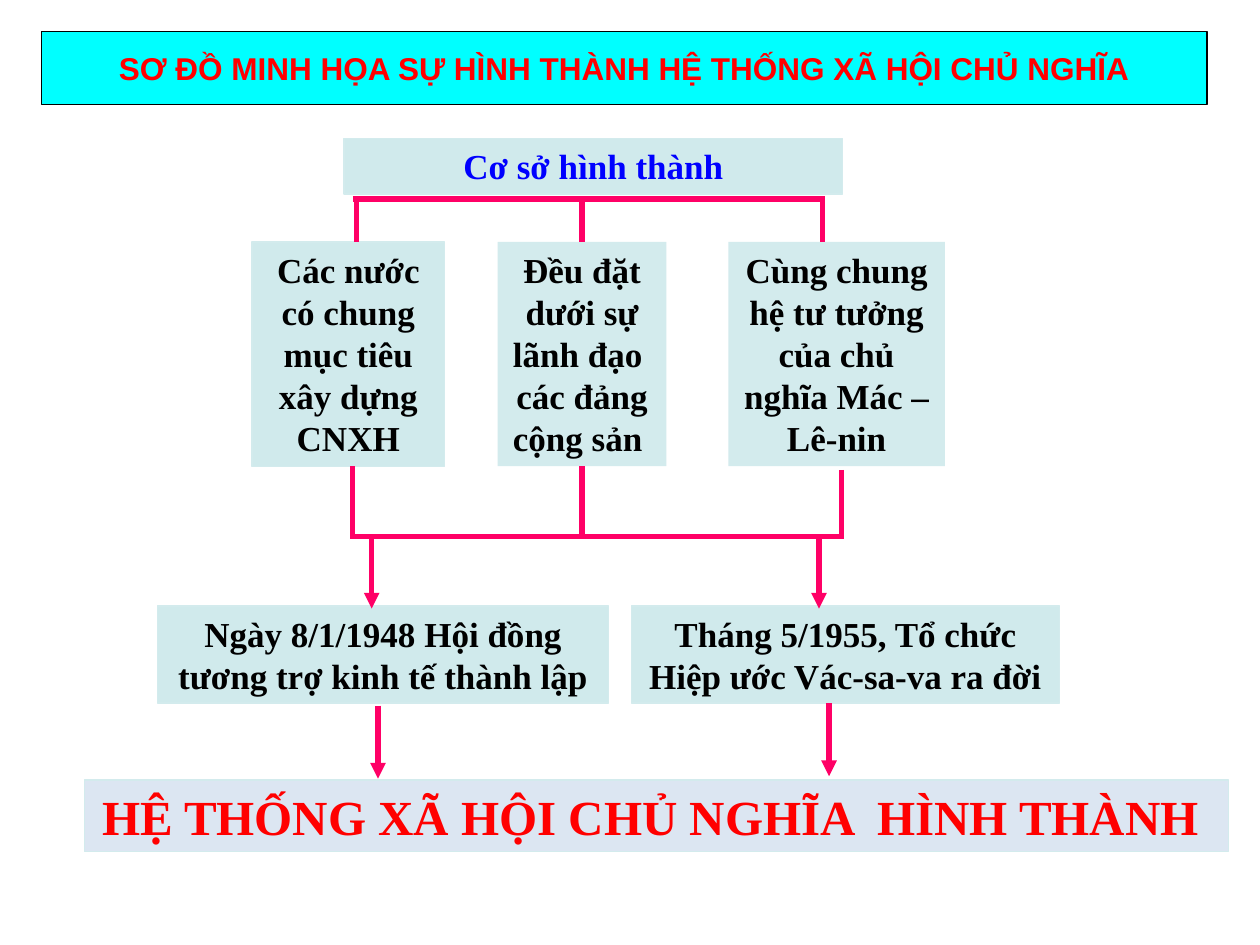
from dataclasses import dataclass

from lxml.etree import SubElement
from pptx import Presentation
from pptx.dml.color import RGBColor
from pptx.enum.shapes import MSO_CONNECTOR, MSO_SHAPE
from pptx.enum.text import MSO_ANCHOR, MSO_AUTO_SIZE, PP_ALIGN
from pptx.oxml.ns import qn
from pptx.util import Emu, Pt

SCALE = 9144  # EMU per px, 100 px to the inch


@dataclass(frozen=True)
class Theme:
    cyan: RGBColor = RGBColor(0x00, 0xFF, 0xFF)
    teal: RGBColor = RGBColor(0xD0, 0xEA, 0xEC)
    pale_teal: RGBColor = RGBColor(0xD3, 0xEB, 0xED)
    pale_blue: RGBColor = RGBColor(0xDC, 0xE6, 0xF2)
    pink: RGBColor = RGBColor(0xFF, 0x00, 0x66)
    red: RGBColor = RGBColor(0xFF, 0x00, 0x00)
    blue: RGBColor = RGBColor(0x00, 0x00, 0xFF)
    black: RGBColor = RGBColor(0x00, 0x00, 0x00)
    title_font: str = "Arial"
    body_font: str = "Times New Roman"
    title_size: Pt = Pt(18)
    body_size: Pt = Pt(20)
    result_size: Pt = Pt(28)
    border: Pt = Pt(0.75)
    stroke: Pt = Pt(3)


theme = Theme()
presentation = Presentation()
presentation.slide_width = Emu(1000 * SCALE)
presentation.slide_height = Emu(750 * SCALE)
slide = presentation.slides.add_slide(presentation.slide_layouts[5])


def style_text(shape, text, font, size, color):
    shape.text_frame.text = text
    for paragraph in shape.text_frame.paragraphs:
        paragraph.alignment = PP_ALIGN.CENTER
        paragraph.font.name = font
        paragraph.font.size = size
        paragraph.font.bold = True
        paragraph.font.color.rgb = color


def add_line(x1, y1, x2, y2, arrow=False):
    line = slide.shapes.add_connector(
        MSO_CONNECTOR.STRAIGHT, *(Emu(v * SCALE) for v in (x1, y1, x2, y2)))
    line.line.color.rgb = theme.pink
    line.line.width = theme.stroke
    if arrow:
        SubElement(line.line._get_or_add_ln(), qn("a:tailEnd"), type="triangle")
    SubElement(line._element.spPr, qn("a:effectLst"))
    return line


# Title banner
title = slide.shapes.title
title.left, title.top, title.width, title.height = (
    Emu(v * SCALE) for v in (33, 25, 925, 58))
title.fill.solid()
title.fill.fore_color.rgb = theme.cyan
title.line.color.rgb = theme.black
title.line.width = theme.border
style_text(title, "SƠ ĐỒ MINH HỌA SỰ HÌNH THÀNH HỆ THỐNG XÃ HỘI CHỦ NGHĨA",
           theme.title_font, theme.title_size, theme.red)
title.text_frame.auto_size = MSO_AUTO_SIZE.NONE
title.text_frame.word_wrap = False
title.text_frame.vertical_anchor = MSO_ANCHOR.MIDDLE

# Boxes: name, position, fill, outlined, text, size, text colour
BASIS_TOP, BASIS_HEIGHT = 192, 178
EVENT_TOP, EVENT_HEIGHT = 481, 77
boxes = [
    ("heading", (273, 110, 396, 44), theme.teal, True,
     "Cơ sở hình thành", theme.body_size, theme.blue),
    ("goal", (200, BASIS_TOP, 153, BASIS_HEIGHT), theme.teal, True,
     "Các nước có chung mục tiêu xây dựng CNXH", theme.body_size, theme.black),
    ("leadership", (395, BASIS_TOP, 134, BASIS_HEIGHT), theme.pale_teal, False,
     "Đều đặt dưới sự lãnh đạo \ncác đảng cộng sản ", theme.body_size, theme.black),
    ("ideology", (578, BASIS_TOP, 172, BASIS_HEIGHT), theme.pale_teal, False,
     "Cùng chung hệ tư tưởng của chủ nghĩa Mác – Lê-nin",
     theme.body_size, theme.black),
    ("council", (125, EVENT_TOP, 358, EVENT_HEIGHT), theme.teal, True,
     "Ngày 8/1/1948 Hội đồng tương trợ kinh tế thành lập",
     theme.body_size, theme.black),
    ("treaty", (501, EVENT_TOP, 340, EVENT_HEIGHT), theme.teal, True,
     "Tháng 5/1955, Tổ chức Hiệp ước Vác-sa-va ra đời",
     theme.body_size, theme.black),
    ("result", (67, 619, 908, 57), theme.pale_blue, True,
     "HỆ THỐNG XÃ HỘI CHỦ NGHĨA  HÌNH THÀNH ", theme.result_size, theme.red),
]
box_shapes = {}
for name, position, fill, outlined, text, size, color in boxes:
    shape = slide.shapes.add_shape(
        MSO_SHAPE.RECTANGLE, *(Emu(v * SCALE) for v in position))
    shape.shadow.inherit = False
    shape.fill.solid()
    shape.fill.fore_color.rgb = fill
    if outlined:
        shape.line.color.rgb = theme.pale_teal
        shape.line.width = theme.border
    else:
        shape.line.fill.background()
    style_text(shape, text, theme.body_font, size, color)
    shape.text_frame.word_wrap = True
    shape.text_frame.vertical_anchor = MSO_ANCHOR.TOP
    shape.text_frame.auto_size = MSO_AUTO_SIZE.SHAPE_TO_FIT_TEXT
    box_shapes[name] = shape

# Upper bracket: heading to the three bases
UPPER_BAR, LOWER_BAR, MIDDLE = 158, 426, 462
add_line(280, UPPER_BAR, 655, UPPER_BAR)
for x in (283, 653):
    add_line(x, UPPER_BAR, x, BASIS_TOP)
middle_drop = add_line(MIDDLE, UPPER_BAR, MIDDLE, BASIS_TOP)
middle_drop.end_connect(box_shapes["leadership"], 0)

# Lower bracket: bases gathered onto one bar
add_line(278, LOWER_BAR, 670, LOWER_BAR)
for x, top in ((280, 370), (668, 373)):
    add_line(x, top, x, LOWER_BAR)
middle_stem = add_line(MIDDLE, 370, MIDDLE, LOWER_BAR)
middle_stem.begin_connect(box_shapes["leadership"], 2)

# Arrows to the two events and on to the result
for x, top, bottom in ((295, LOWER_BAR, 483), (650, LOWER_BAR, 483),
                       (300, 560, 618), (658, 558, 616)):
    add_line(x, top, x, bottom, arrow=True)

presentation.save("out.pptx")
